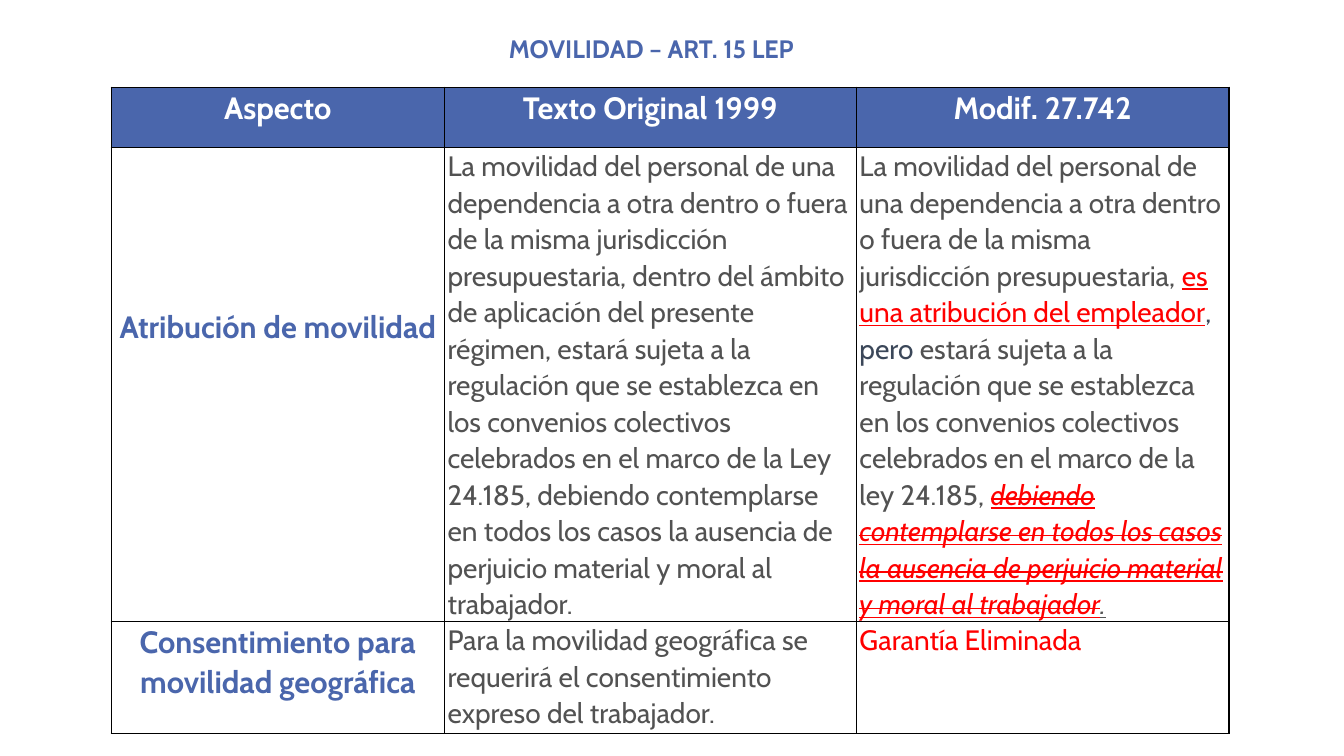
from lxml.etree import SubElement
from pptx import Presentation
from pptx.dml.color import RGBColor
from pptx.enum.text import MSO_ANCHOR, MSO_AUTO_SIZE, PP_ALIGN
from pptx.oxml.ns import qn
from pptx.util import Cm, Pt

BLUE, GREY, RED, NAVY = "4A66AC", "525252", "FF0000", "3B4759"
HEADING = {"size": Pt(22), "bold": True}
BODY = {"size": Pt(20), "bold": False}
ADDED = {**BODY, "underline": True}
REMOVED = {**ADDED, "italic": True}


def rgb(color):
    return RGBColor.from_string(color)


def set_attributes(target, values):
    for name, value in values.items():
        setattr(target, name, value)


class SlideBuilder:
    font_name = "Cabin"
    border_width = Pt(1)
    border_color = "000000"
    line_spacing = 1.07

    def __init__(self, presentation):
        self.slide = presentation.slides.add_slide(presentation.slide_layouts[5])

    def add_run(self, paragraph, text, color, style, strike=False):
        run = paragraph.add_run()
        run.text = text
        set_attributes(run.font, {"name": self.font_name, **style})
        run.font.color.rgb = rgb(color)
        if strike:
            run.font._element.set("strike", "sngStrike")

    def title(self, text, left, top, width, height):
        shape = self.slide.shapes.title
        set_attributes(shape, {"left": left, "top": top, "width": width, "height": height})
        set_attributes(shape.text_frame, {
            "word_wrap": True,
            "vertical_anchor": MSO_ANCHOR.TOP,
            "auto_size": MSO_AUTO_SIZE.SHAPE_TO_FIT_TEXT,
        })
        paragraph = shape.text_frame.paragraphs[0]
        paragraph.alignment = PP_ALIGN.LEFT
        self.add_run(paragraph, text, BLUE, {"size": Pt(18), "bold": True})

    def borders(self, cell):
        properties = cell._tc.get_or_add_tcPr()
        for side in ("lnL", "lnR", "lnT", "lnB"):
            line = SubElement(properties, qn(f"a:{side}"), w=str(self.border_width))
            fill = SubElement(line, qn("a:solidFill"))
            SubElement(fill, qn("a:srgbClr"), val=self.border_color)

    def cell(self, cell, runs, centered, fill=None, margin_top=0):
        set_attributes(cell, {
            "margin_left": Cm(0.08), "margin_right": Cm(0.08),
            "margin_top": margin_top, "margin_bottom": 0,
        })
        self.borders(cell)
        if fill:
            cell.fill.solid()
            cell.fill.fore_color.rgb = rgb(fill)
        else:
            cell.fill.background()
        paragraph = cell.text_frame.paragraphs[0]
        paragraph.alignment = PP_ALIGN.CENTER if centered else PP_ALIGN.LEFT
        paragraph.line_spacing = self.line_spacing
        for run in runs:
            self.add_run(paragraph, *run)

    def table(self, rows, left, top, widths, heights, label_offsets):
        frame = self.slide.shapes.add_table(
            len(rows), len(widths), left, top, sum(widths), sum(heights))
        table = frame.table
        set_attributes(table, {"first_row": False, "horz_banding": False})
        for column, width in zip(table.columns, widths):
            column.width = width
        for row, height in zip(table.rows, heights):
            row.height = height
        for row_index, row in enumerate(rows):
            for column_index, runs in enumerate(row):
                is_header, is_label = row_index == 0, column_index == 0
                self.cell(
                    table.cell(row_index, column_index), runs,
                    centered=is_header or is_label,
                    fill=BLUE if is_header else None,
                    margin_top=label_offsets[row_index] if is_label else 0)


def main():
    presentation = Presentation()
    set_attributes(presentation, {"slide_width": Cm(33.87), "slide_height": Cm(19.05)})
    builder = SlideBuilder(presentation)

    # Title
    builder.title("MOVILIDAD – ART. 15 LEP", Cm(12.57), Cm(0.71), Cm(13.03), Cm(1.02))

    # Comparison of the two texts, each cell a list of runs
    header = [[(text, "FFFFFF", HEADING)]
              for text in ("Aspecto", "Texto Original 1999", "Modif. 27.742")]
    attribution = [
        [("Atribución de movilidad", BLUE, HEADING)],
        [("La movilidad del personal de una dependencia a otra dentro o fuera de la misma "
          "jurisdicción presupuestaria, dentro del ámbito de aplicación del presente régimen, "
          "estará sujeta a la regulación que se establezca en los convenios colectivos "
          "celebrados en el marco de la Ley 24.185, debiendo contemplarse en todos los casos "
          "la ausencia de perjuicio material y moral al trabajador.", GREY, BODY)],
        [("La movilidad del personal de una dependencia a otra dentro o fuera de la misma "
          "jurisdicción presupuestaria, ", GREY, BODY),
         ("es una atribución del empleador", RED, ADDED),
         (", pero ", NAVY, BODY),
         ("estará sujeta a la regulación que se establezca en los convenios colectivos "
          "celebrados en el marco de la ley 24.185, ", GREY, BODY),
         ("debiendo contemplarse en todos los casos la ausencia de perjuicio material y "
          "moral al trabajador", RED, REMOVED, True),
         (".", "555555", REMOVED)],
    ]
    consent = [
        [("Consentimiento para movilidad geográfica", BLUE, HEADING)],
        [("Para la movilidad geográfica se requerirá el consentimiento expreso del "
          "trabajador.", GREY, BODY)],
        [("Garantía Eliminada", RED, BODY)],
    ]
    builder.table(
        [header, attribution, consent], Cm(2.8), Cm(2.2),
        widths=[Cm(8.4), Cm(10.38), Cm(9.39)],
        heights=[Cm(1.51), Cm(11.95), Cm(2.82)],
        label_offsets=[0, Cm(4), 0])

    presentation.save("out.pptx")


if __name__ == "__main__":
    main()
